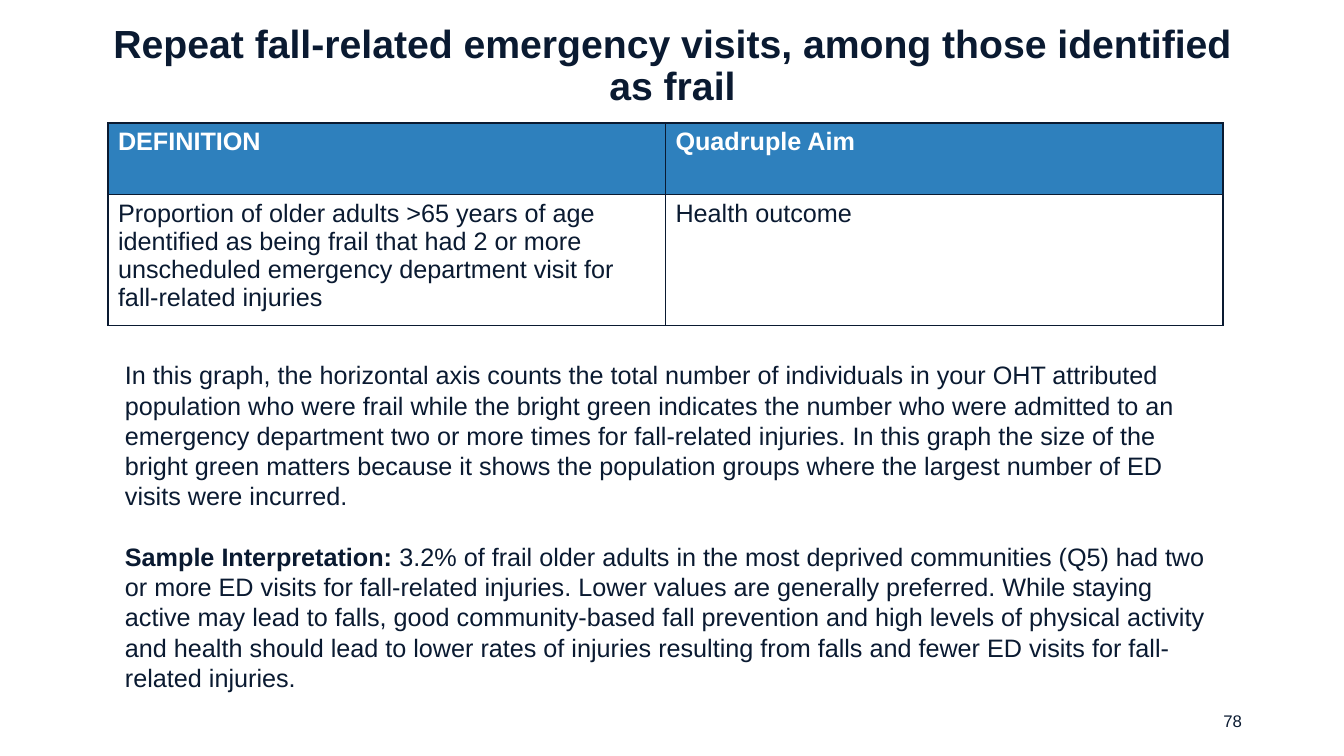
import pptx
import pptx.enum.text
import pptx.dml.color
import pptx.oxml.ns
import pptx.util
import lxml.etree

Cm = pptx.util.Cm
Pt = pptx.util.Pt
ALIGN = pptx.enum.text.PP_ALIGN
ANCHOR = pptx.enum.text.MSO_ANCHOR
FONT = "Arial"
COLORS = {"ink": "0A1A31", "head": "2E80BD", "white": "FFFFFF"}

TITLE = "Repeat fall-related emergency visits, among those identified as frail"
ROWS = [
    ["DEFINITION", "Quadruple Aim"],
    ["Proportion of older adults >65 years of age identified as being frail "
     "that had 2 or more unscheduled emergency department visit for "
     "fall-related injuries", "Health outcome"],
]
# Each paragraph is a list of (text, bold) runs
NOTES = [
    [("In this graph, the horizontal axis counts the total number of "
      "individuals in your OHT attributed population who were frail while "
      "the bright green indicates the number who were admitted to an "
      "emergency department two or more times for fall-related injuries. "
      "In this graph the size of the bright green matters because it shows "
      "the population groups where the largest number of ED visits were "
      "incurred.", False)],
    [("Sample Interpretation: ", True),
     ("3.2% of frail older adults in the most deprived communities (Q5) had "
      "two or more ED visits for fall-related injuries. Lower values are "
      "generally preferred. While staying active may lead to falls, good "
      "community-based fall prevention and high levels of physical activity "
      "and health should lead to lower rates of injuries resulting from "
      "falls and fewer ED visits for fall-related injuries.", False)],
]


def rgb(name):
    return pptx.dml.color.RGBColor.from_string(COLORS[name])


def write(para, text, size, color="ink", bold=False):
    run = para.add_run()
    run.text = text
    run.font.name = FONT
    run.font.size = Pt(size)
    run.font.bold = bold
    run.font.color.rgb = rgb(color)


def add_box(slide, box):
    frame = slide.shapes.add_textbox(*box).text_frame
    frame.word_wrap = True
    return frame


def add_title(slide, box):
    title = slide.shapes.title
    title.left, title.top, title.width, title.height = box
    frame = title.text_frame
    frame.word_wrap = True
    frame.auto_size = pptx.enum.text.MSO_AUTO_SIZE.NONE
    frame.vertical_anchor = ANCHOR.MIDDLE
    frame.margin_left = frame.margin_right = Cm(0.35)
    para = frame.paragraphs[0]
    para.alignment = ALIGN.CENTER
    para.line_spacing = Pt(30)
    write(para, TITLE, 28, bold=True)


def add_edges(cell):
    props = cell._tc.get_or_add_tcPr()
    qn = pptx.oxml.ns.qn
    for spot, side in enumerate(("a:lnL", "a:lnR", "a:lnT", "a:lnB")):
        line = lxml.etree.Element(qn(side), w=str(Pt(1)))
        fill = lxml.etree.SubElement(line, qn("a:solidFill"))
        lxml.etree.SubElement(fill, qn("a:srgbClr"), val=COLORS["ink"])
        props.insert(spot, line)


def add_grid(slide, box):
    left, top, width, height = box
    grid = slide.shapes.add_table(2, 2, left, top, width, height).table
    grid.horz_banding = False
    grid.rows[0].height = Cm(1.8)
    grid.rows[1].height = height - Cm(1.8)
    for r, row in enumerate(ROWS):
        for c, text in enumerate(row):
            cell = grid.cell(r, c)
            cell.fill.solid()
            cell.fill.fore_color.rgb = rgb("white" if r else "head")
            add_edges(cell)
            para = cell.text_frame.paragraphs[0]
            para.line_spacing = Pt(20)
            write(para, text, 18, "ink" if r else "white", r == 0)


def add_notes(slide, box):
    frame = add_box(slide, box)
    for i, runs in enumerate(NOTES):
        para = frame.add_paragraph() if i else frame.paragraphs[0]
        para.line_spacing = Pt(21.6)
        if i:
            para.space_before = Pt(21.6)
        for text, bold in runs:
            write(para, text, 18, bold=bold)


def add_page(slide, box):
    frame = add_box(slide, box)
    frame.vertical_anchor = ANCHOR.MIDDLE
    para = frame.paragraphs[0]
    para.alignment = ALIGN.RIGHT
    write(para, "78", 12)


def main():
    deck = pptx.Presentation()
    deck.slide_width, deck.slide_height = Cm(33.87), Cm(19.05)
    slide = deck.slides.add_slide(deck.slide_layouts[5])

    # Heading, definition table, reading guide, page number
    add_title(slide, (Cm(1.96), Cm(0.61), Cm(29.97), Cm(2.13)))
    add_grid(slide, (Cm(2.72), Cm(3.1), Cm(28.1), Cm(5.1)))
    add_notes(slide, (Cm(2.9), Cm(8.94), Cm(28.1), Cm(8.71)))
    add_page(slide, (Cm(23.93), Cm(17.65), Cm(7.62), Cm(1.02)))
    deck.save("out.pptx")


if __name__ == "__main__":
    main()
